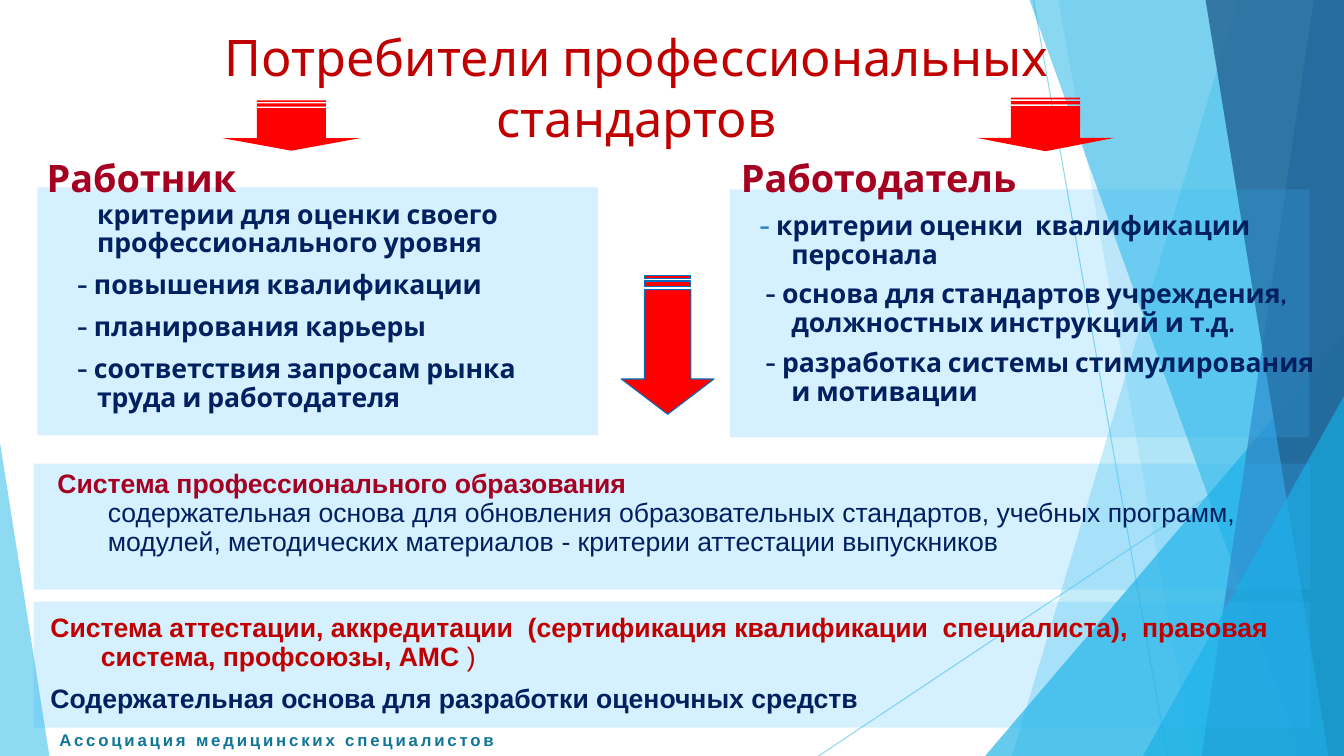
from lxml.etree import SubElement
from pptx import Presentation
from pptx.dml.color import RGBColor
from pptx.enum.shapes import MSO_CONNECTOR, MSO_SHAPE
from pptx.enum.text import MSO_ANCHOR, MSO_AUTO_SIZE, PP_ALIGN
from pptx.oxml.ns import qn
from pptx.util import Inches, Pt

WIDTH, HEIGHT = Inches(13.33), Inches(7.5)
NAVY, CRIMSON, RED = "002060", "A50021", "C00000"
SKY, CYAN, PANEL = "5FCBEF", "17B0E4", "31B6FD"
HANGING = (0.5, -0.5)


# Lengths are percentages of the slide's width and height
def across(share):
    return round(WIDTH * share / 100)


def down(share):
    return round(HEIGHT * share / 100)


def area(left, top, width, height):
    return across(left), down(top), across(width), down(height)


def color(hex_code):
    return RGBColor.from_string(hex_code)


# Shapes
def set_alpha(fill_owner, percent):
    for tone in fill_owner.iter(qn("a:srgbClr")):
        SubElement(tone, qn("a:alpha"), val=str(percent * 1000))


def paint(shape, hex_code, alpha=100):
    shape.shadow.inherit = False
    shape.fill.solid()
    shape.fill.fore_color.rgb = color(hex_code)
    shape.line.fill.background()
    if alpha < 100:
        set_alpha(shape.element.spPr, alpha)


def add_panel(page, *place):
    paint(page.shapes.add_shape(MSO_SHAPE.RECTANGLE, *area(*place)), PANEL, 20)


def add_triangle(page, place, apex, hex_code, alpha):
    triangle = page.shapes.add_shape(MSO_SHAPE.ISOSCELES_TRIANGLE, *area(*place))
    triangle.adjustments[0] = apex
    paint(triangle, hex_code, alpha)


def add_facet(page, top_x, bottom_x, hex_code, alpha):
    """Slanted band that runs from its left edge to the slide's right edge."""
    builder = page.shapes.build_freeform(across(top_x), 0)
    builder.add_line_segments(
        [(WIDTH, 0), (WIDTH, HEIGHT), (across(bottom_x), HEIGHT)], close=True)
    paint(builder.convert_to_shape(), hex_code, alpha)


def add_ray(page, start_x, start_y, end_x, end_y):
    ray = page.shapes.add_connector(
        MSO_CONNECTOR.STRAIGHT, across(start_x), down(start_y),
        across(end_x), down(end_y))
    ray.line.color.rgb = color(SKY)
    ray.line.width = Pt(0.75)
    set_alpha(ray.element.spPr, 70)
    SubElement(ray.element.spPr, qn("a:effectLst"))


def add_down_arrow(page, place, head, outline=None):
    arrow = page.shapes.add_shape(MSO_SHAPE.STRIPED_RIGHT_ARROW, *area(*place))
    arrow.rotation = 90
    arrow.adjustments[0], arrow.adjustments[1] = 0.5, head
    paint(arrow, "FF0000")
    if outline:
        arrow.line.color.rgb = color(outline)
        arrow.line.width = Pt(0.75)


# Text
def set_frame(box, place, inset_x=0.13, inset_y=0.07):
    box.left, box.top, box.width, box.height = area(*place)
    frame = box.text_frame
    frame.word_wrap = True
    frame.auto_size = MSO_AUTO_SIZE.NONE
    frame.vertical_anchor = MSO_ANCHOR.TOP
    frame.margin_left = frame.margin_right = Inches(inset_x)
    frame.margin_top = frame.margin_bottom = Inches(inset_y)
    return frame


def add_span(para, text, size, font, hex_code, bold=True):
    span = para.add_run()
    span.text = text
    span.font.size = Pt(size)
    span.font.name = font
    span.font.bold = bold
    span.font.color.rgb = color(hex_code)
    return span


def add_para(frame, indents, before):
    """Return the first paragraph while it is empty, else a new one."""
    para = frame.paragraphs[0]
    if para.runs:
        para = frame.add_paragraph()
    para.line_spacing = 0.9
    para.space_before = Pt(before)
    margin, indent = indents
    props = para._p.get_or_add_pPr()
    props.set("marL", str(Inches(margin)))
    props.set("indent", str(Inches(indent)))
    SubElement(props, qn("a:buNone"))
    return para


def bring_to_front(box):
    box.element.getparent().append(box.element)


def add_text_box(page, *place, **insets):
    return set_frame(page.shapes.add_textbox(*area(*place)), place, **insets)


# Parts of the slide
def draw_backdrop(page):
    add_ray(page, 76.9, 0, 86.85, 100)
    add_ray(page, 100, 53.73, 60.9, 100)
    add_facet(page, 92.1, 75.3, SKY, 36)
    add_facet(page, 78.75, 88.75, SKY, 20)
    add_triangle(page, (73.3, 44.4, 26.7, 55.6), 1, CYAN, 66)
    add_facet(page, 76.6, 96.85, CYAN, 50)
    add_facet(page, 97.75, 89.4, "2E83C3", 70)
    add_facet(page, 89.7, 98.85, "226292", 80)
    add_triangle(page, (85.05, 52.4, 14.95, 47.6), 1, CYAN, 66)
    add_triangle(page, (0, 58.53, 3.68, 41.47), 0, SKY, 70)


def write_title(box):
    bring_to_front(box)
    para = set_frame(box, (6.9, 2.53, 80.95, 11.47)).paragraphs[0]
    para.alignment = PP_ALIGN.CENTER
    add_span(para, "Потребители профессиональных стандартов", 36, "Cabin", RED, False)


def write_worker(box):
    bring_to_front(box)
    frame = set_frame(box, (2.5, 20.27, 43, 36.67))
    para = add_para(frame, HANGING, 9.5)
    add_span(para, "Работник", 27, "Cabin", CRIMSON)
    para.add_line_break()
    add_span(para, "критерии для оценки своего профессионального уровня", 19, "Cabin", NAVY)
    for item in ("повышения квалификации", "планирования карьеры",
                 "соответствия запросам рынка труда и работодателя"):
        add_span(add_para(frame, (0.5, -0.2), 9.5), "- " + item, 19, "Cabin", NAVY)


def write_employer(box):
    bring_to_front(box)
    frame = set_frame(box, (54.15, 20.27, 44.7, 34.8))
    add_span(add_para(frame, HANGING, 8), "Работодатель", 27, "Cabin", CRIMSON)
    for item, indent, dash_color in (
            ("критерии оценки  квалификации персонала", -0.32, "2E83C3"),
            ("основа для стандартов учреждения, должностных инструкций и т.д.", -0.26, NAVY),
            ("разработка системы стимулирования и мотивации", -0.26, NAVY)):
        para = add_para(frame, (0.5, indent), 8)
        add_span(para, "- ", 19, "Cabin", dash_color)
        add_span(para, item, 19, "Cabin", NAVY)


def write_education(page):
    para = add_para(add_text_box(page, 3.3, 61.33, 94.1, 13.33), HANGING, 9.5)
    stops = SubElement(para._p.pPr, qn("a:tabLst"))
    SubElement(stops, qn("a:tab"), pos=str(Inches(5.21)), algn="l")
    add_span(para, "Система профессионального образования", 19, "Arial", CRIMSON)
    para.add_line_break()
    add_span(para, "содержательная основа для обновления образовательных стандартов, "
             "учебных программ, модулей, методических материалов\t"
             "- критерии аттестации выпускников", 19, "Arial", NAVY, False)


def write_attestation(page):
    frame = add_text_box(page, 2.78, 80.4, 95.2, 15.47)
    para = add_para(frame, HANGING, 9.5)
    add_span(para, "Система аттестации, аккредитации  (сертификация квалификации  "
             "специалиста),  правовая система, профсоюзы, АМС ", 19, "Arial", RED)
    add_span(para, ")", 19, "Arial", RED, False)
    add_span(add_para(frame, HANGING, 9.5),
             "Содержательная основа для разработки оценочных средств", 19, "Arial", NAVY)


def write_footer(page):
    frame = add_text_box(page, 3.68, 95.87, 56.6, 4, inset_x=0.1, inset_y=0.05)
    span = add_span(frame.paragraphs[0], "Ассоциация медицинских специалистов",
                    12, "Arial", "0F7698")
    span.font._element.set("spc", "200")


def main():
    deck = Presentation()
    deck.slide_width, deck.slide_height = WIDTH, HEIGHT
    page = deck.slides.add_slide(deck.slide_layouts.get_by_name("Two Content"))
    title, worker, employer = page.placeholders

    draw_backdrop(page)
    write_footer(page)
    for place in ((2.78, 24.8, 41.7, 32.8), (54.3, 25.07, 43.13, 32.8),
                  (2.5, 61.33, 95, 16.67), (2.5, 79.6, 95, 16.67)):
        add_panel(page, *place)
    add_down_arrow(page, (19.8, 7.47, 3.75, 18.27), 0.25)
    add_down_arrow(page, (75.8, 7.33, 3.98, 18.27), 0.25)
    add_down_arrow(page, (44.5, 39.47, 10.35, 12.27), 0.38, "0070C0")

    write_attestation(page)
    write_education(page)
    write_worker(worker)
    write_employer(employer)
    write_title(title)
    deck.save("out.pptx")


if __name__ == "__main__":
    main()
